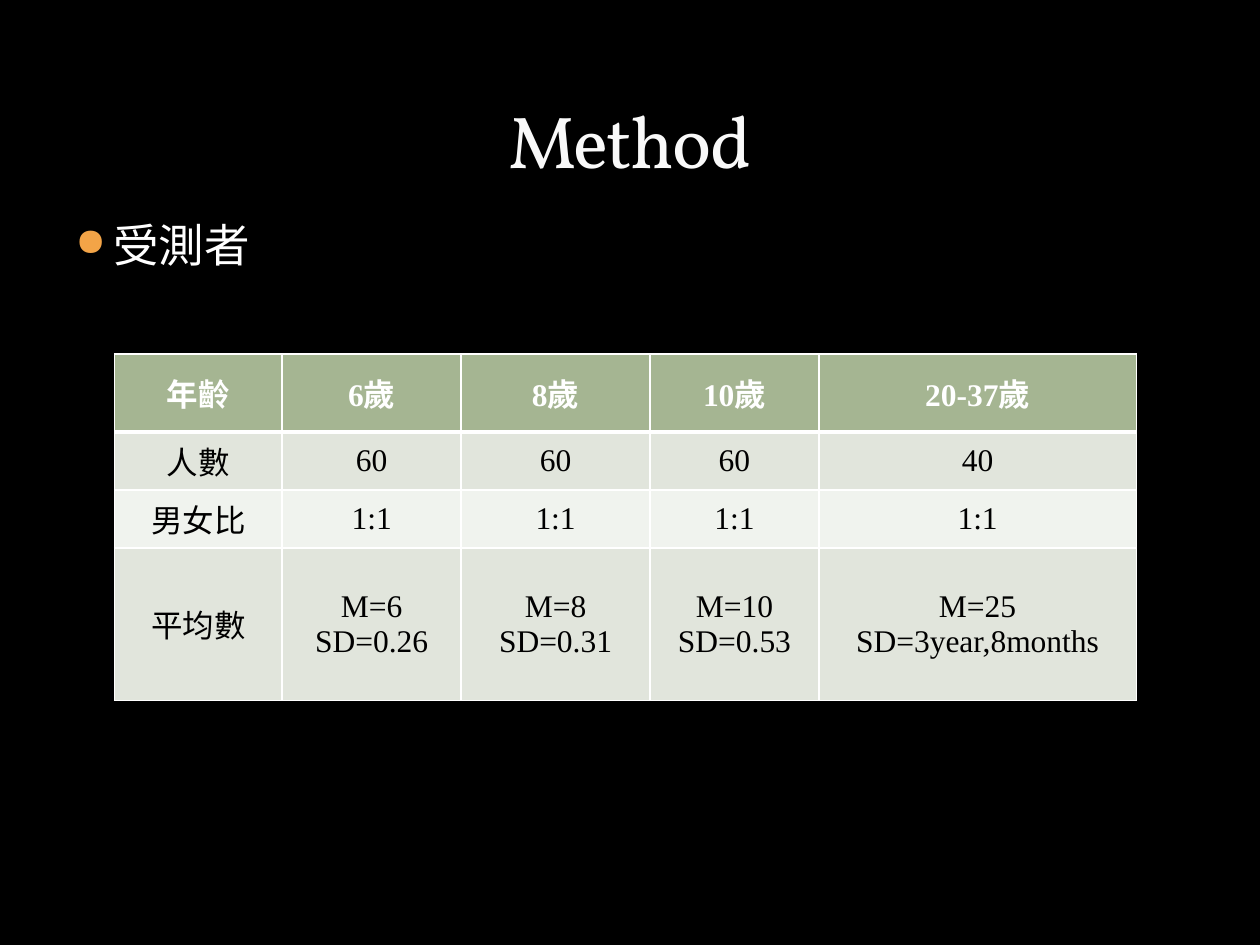
from lxml import etree
from pptx import Presentation
from pptx.dml.color import RGBColor
from pptx.enum.text import MSO_ANCHOR, PP_ALIGN
from pptx.oxml.ns import qn
from pptx.util import Inches, Pt

CENTER = PP_ALIGN.CENTER
MIDDLE, BOTTOM = MSO_ANCHOR.MIDDLE, MSO_ANCHOR.BOTTOM
COLORS = {
    "bg": "000000", "title": "F9F9F9", "white": "FFFFFF", "black": "000000",
    "bullet": "F3A447", "header": "A5B592", "odd": "E1E5DC", "even": "F0F3EE",
}
HEAD_FONT, TABLE_FONT = "Vollkorn", "Times New Roman"
COL_WIDTHS = [1.33, 1.42, 1.5, 1.34, 2.52]
ROW_HEIGHTS = [0.62, 0.46, 0.46, 1.21]
ROWS = [
    ["年齡", "6歲", "8歲", "10歲", "20-37歲"],
    ["人數", "60", "60", "60", "40"],
    ["男女比", "1:1", "1:1", "1:1", "1:1"],
    ["平均數", "M=6\nSD=0.26", "M=8\nSD=0.31", "M=10\nSD=0.53",
     "M=25\nSD=3year,8months"],
]


def rgb(name):
    """Return the named colour."""
    return RGBColor.from_string(COLORS[name])


def style_runs(p, font, size, color, bold=False):
    """Format every run of a paragraph."""
    for r in p.runs:
        r.font.name, r.font.size, r.font.bold = font, Pt(size), bold
        r.font.color.rgb = rgb(color)


def add_text(slide, box, text, size, color):
    """Add a wrapped one-paragraph text box and return its frame."""
    tf = slide.shapes.add_textbox(*map(Inches, box)).text_frame
    tf.word_wrap = True
    tf.text = text
    style_runs(tf.paragraphs[0], HEAD_FONT, size, color)
    return tf


def add_title(slide, box):
    """Place the centred title at the bottom of its box."""
    tf = add_text(slide, box, "Method", 42, "title")
    tf.vertical_anchor = BOTTOM
    p = tf.paragraphs[0]
    p.alignment = CENTER
    p.runs[0].font._element.set("spc", "-100")


def add_bullet(slide, box):
    """Place the bulleted topic line."""
    p = add_text(slide, box, "受測者", 26, "white").paragraphs[0]
    pPr = p._p.get_or_add_pPr()
    pPr.set("marL", str(Inches(0.3)))
    pPr.set("indent", str(Inches(-0.3)))
    clr = etree.SubElement(pPr, qn("a:buClr"))
    etree.SubElement(clr, qn("a:srgbClr"), val=COLORS["bullet"])
    etree.SubElement(pPr, qn("a:buSzPct"), val="85000")
    etree.SubElement(pPr, qn("a:buChar"), char="●")


def set_borders(cell, widths):
    """Draw white cell borders with the given widths in points."""
    tcPr = cell._tc.get_or_add_tcPr()
    for i, (side, width) in enumerate(widths.items()):
        ln = etree.Element(qn(f"a:ln{side}"), w=str(Pt(width)))
        fill = etree.SubElement(ln, qn("a:solidFill"))
        etree.SubElement(fill, qn("a:srgbClr"), val=COLORS["white"])
        tcPr.insert(i, ln)


def add_subjects_table(slide, box):
    """Place the table of subjects by age group."""
    table = slide.shapes.add_table(
        len(ROWS), len(COL_WIDTHS), *map(Inches, box)).table
    for col, width in zip(table.columns, COL_WIDTHS):
        col.width = Inches(width)
    for i, (row, height) in enumerate(zip(table.rows, ROW_HEIGHTS)):
        row.height = Inches(height)
        head = i == 0
        fill = "header" if head else "odd" if i % 2 else "even"
        for cell, text in zip(row.cells, ROWS[i]):
            cell.text = text
            cell.vertical_anchor = MIDDLE
            cell.fill.solid()
            cell.fill.fore_color.rgb = rgb(fill)
            set_borders(cell, {"L": 1, "R": 1, "T": 3 if i == 1 else 1,
                               "B": 3 if head else 1})
            for p in cell.text_frame.paragraphs:
                p.alignment = CENTER
                style_runs(p, TABLE_FONT, 18, "white" if head else "black", head)


def main():
    """Build and save the slide."""
    prs = Presentation()
    prs.slide_width, prs.slide_height = Inches(10), Inches(7.5)
    slide = prs.slides.add_slide(prs.slide_layouts[6])
    slide.background.fill.solid()
    slide.background.fill.fore_color.rgb = rgb("bg")
    add_bullet(slide, (0.5, 1.67, 9, 5))
    add_title(slide, (0.5, 0.17, 9, 1.33))
    add_subjects_table(slide, (0.91, 2.81, sum(COL_WIDTHS), sum(ROW_HEIGHTS)))
    prs.save("out.pptx")


if __name__ == "__main__":
    main()
